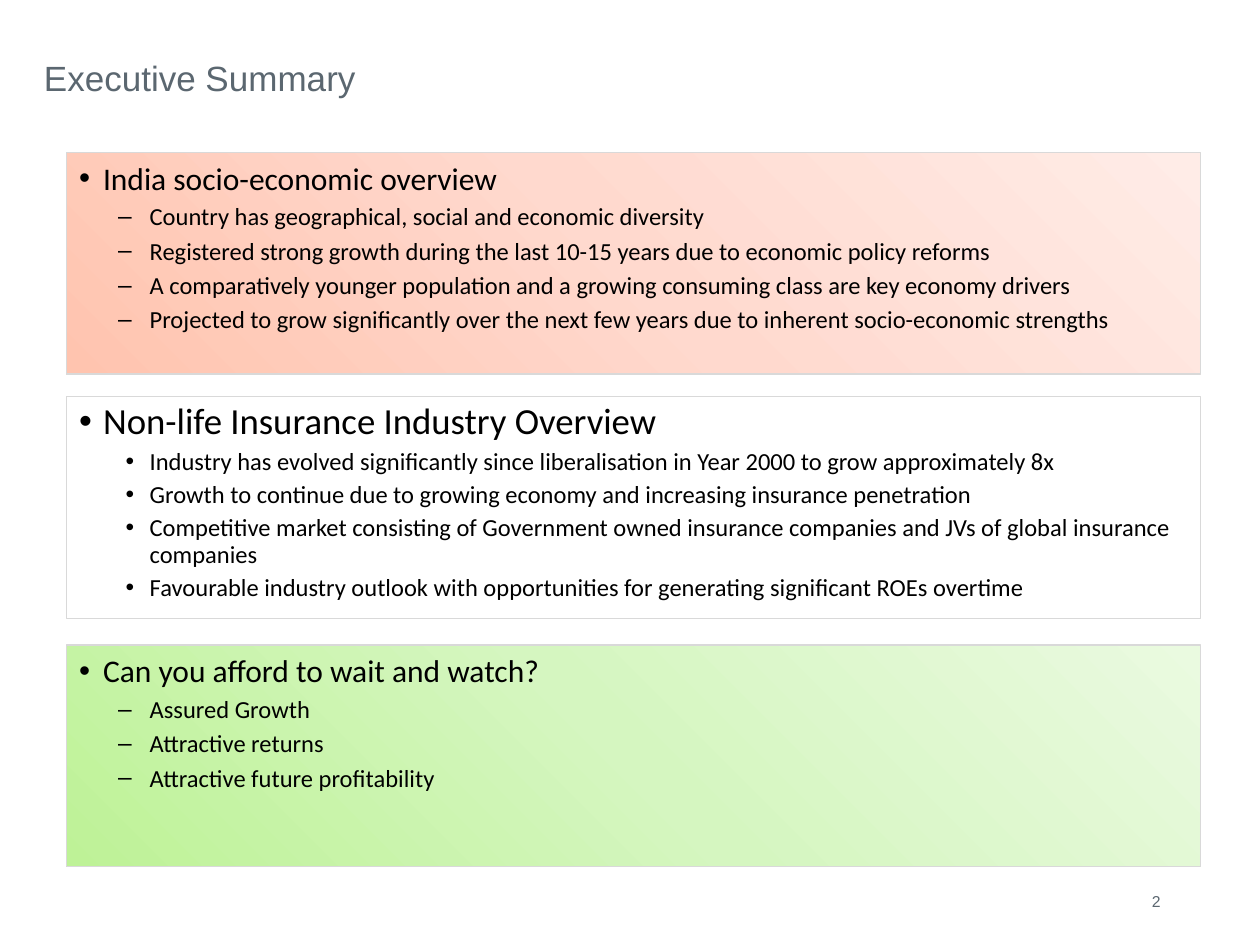
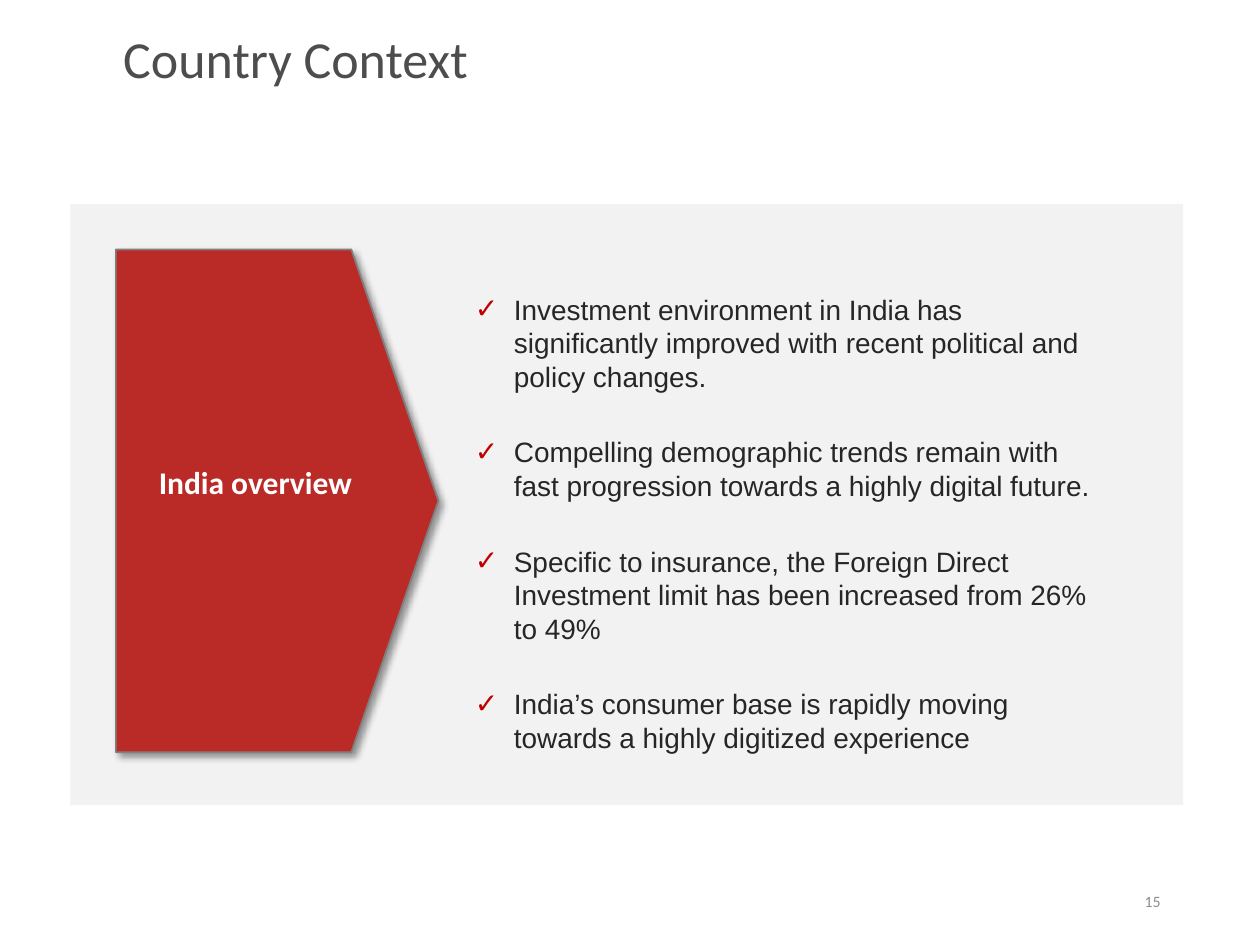
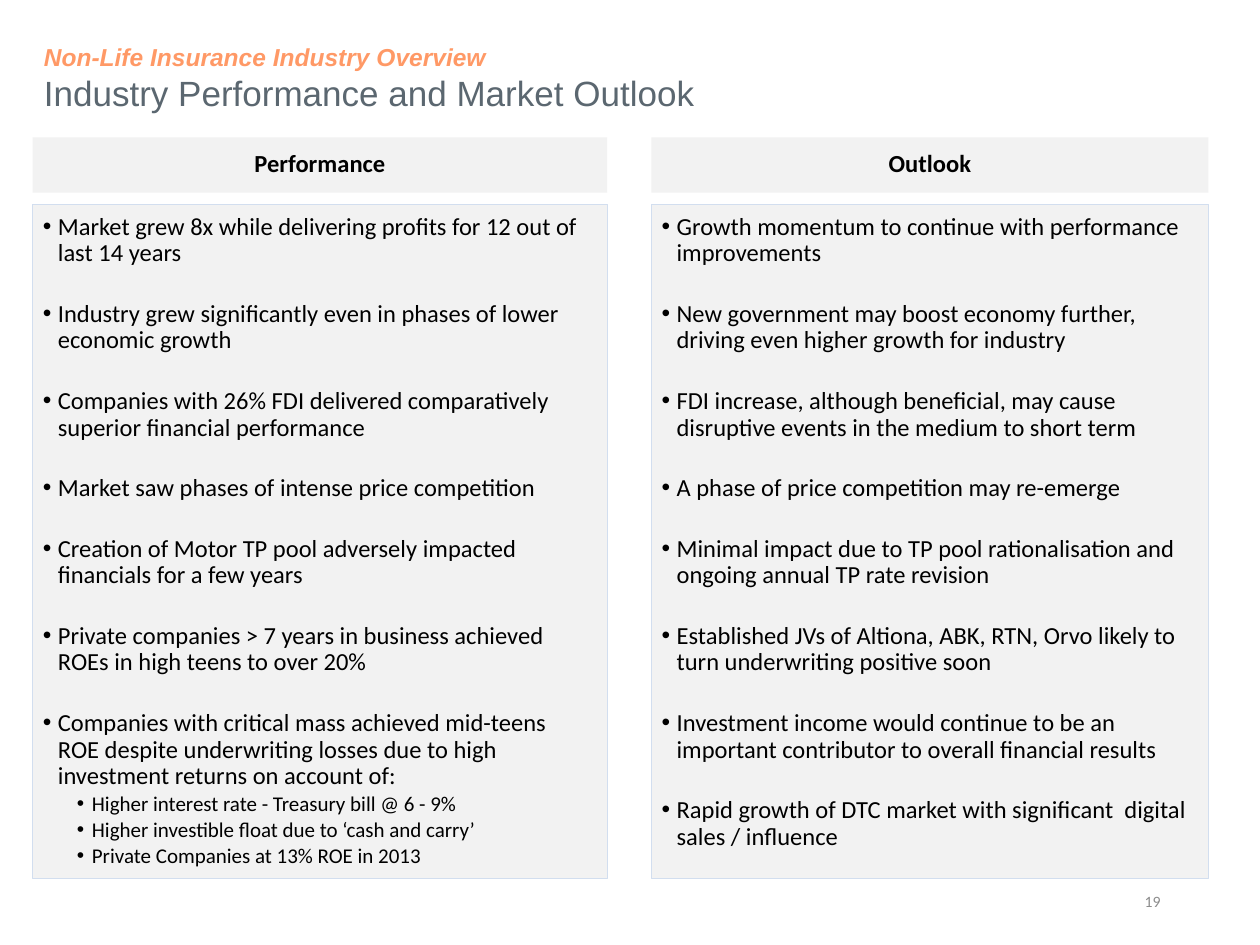
from dataclasses import dataclass, replace

from lxml import etree
from pptx import Presentation
from pptx.dml.color import RGBColor
from pptx.enum.shapes import MSO_SHAPE
from pptx.enum.text import MSO_ANCHOR, PP_ALIGN
from pptx.oxml import parse_xml
from pptx.oxml.ns import nsdecls, qn
from pptx.util import Inches, Pt

RECT = MSO_SHAPE.RECTANGLE
ARROW = MSO_SHAPE.PENTAGON
TOP, MIDDLE = MSO_ANCHOR.TOP, MSO_ANCHOR.MIDDLE
LEFT, CENTER, RIGHT = PP_ALIGN.LEFT, PP_ALIGN.CENTER, PP_ALIGN.RIGHT

COLORS = {
    "black": "000000",
    "white": "FFFFFF",
    "slate": "5B6770",
    "dark": "4D4D4D",
    "ink": "262626",
    "gray": "8C8C8C",
    "edge": "808080",
    "rule": "D9D9D9",
    "panel": "F2F2F2",
    "frame": "D2DEEF",
    "red": "BA2B28",
    "check": "C00000",
    "orange": "FF9966",
}
PEACH = ("FFC4AF", "FFD9CE", "FFECE7")
GREEN = ("BEF297", "D5F6C0", "EAFAE0")


@dataclass(frozen=True)
class Style:
    size: float
    font: str = "Calibri"
    color: str = "black"
    bold: bool = False
    italic: bool = False
    align: int = LEFT
    left: float = 0
    hang: float = 0
    line: float = 1
    before: float = 0
    after: float = 0
    mark: str = ""
    tint: str = ""


@dataclass(frozen=True)
class Box:
    x: float
    y: float
    w: float
    h: float
    fill: str = ""
    edge: str = ""
    weight: float = 0.75
    kind: int = RECT
    anchor: int = TOP
    pad: tuple = (0.1, 0.05, 0.1, 0.05)


@dataclass(frozen=True)
class Topic:
    y: float
    head: str
    points: tuple
    top: Style
    sub: Style
    shades: tuple = ()


Lines = list[tuple[str, Style]]

TITLE = Style(20, "Arial", "slate")
KICKER = Style(14, "Arial", "orange", bold=True, italic=True)
PAGE = Style(9, color="gray", align=RIGHT)
TITLE_BOX = Box(0.25, 0.08, 9.42, 1.07, anchor=MIDDLE)
PAGE_BOX = Box(7.06, 6.95, 2.25, 0.4, anchor=MIDDLE)

HEAD = Style(18, left=0.19, hang=0.19, before=3.6, mark="•")
DASH = Style(14, left=0.56, hang=0.25, before=2.8, mark="–")
LEAD = replace(HEAD, size=21, line=0.9, before=7.5)
DOT = replace(DASH, hang=0.19, line=0.9, before=3.8, mark="•")
CHECK = Style(16, "Arial", "ink", left=0.49, hang=0.31, before=12, after=12,
              mark="✓", tint="check")
LABEL = Style(18, color="white", bold=True, align=CENTER)
BANNER = Style(14, bold=True, align=CENTER, line=0.9)
ITEM = Style(14, left=0.12, hang=0.12, line=0.9, after=19.5, mark="•")
LAST = replace(ITEM, after=2.1)
DETAIL = replace(LAST, size=12, left=0.39, after=1.8)

TOPICS = (
    Topic(1.21, "India socio-economic overview", (
        "Country has geographical, social and economic diversity",
        "Registered strong growth during the last 10-15 years due to economic policy reforms",
        "A comparatively younger population and a growing consuming class are key economy drivers",
        "Projected to grow significantly over the next few years due to inherent socio-economic strengths",
    ), HEAD, DASH, PEACH),
    Topic(3.15, "Non-life Insurance Industry Overview", (
        "Industry has evolved significantly since liberalisation in Year 2000 to grow approximately 8x",
        "Growth to continue due to growing economy and increasing insurance penetration",
        "Competitive market consisting of Government owned insurance companies and JVs of global insurance companies",
        "Favourable industry outlook with opportunities for generating significant ROEs overtime",
    ), LEAD, DOT),
    Topic(5.12, "Can you afford to wait and watch?", (
        "Assured Growth",
        "Attractive returns",
        "Attractive future profitability",
    ), HEAD, DASH, GREEN),
)

CONTEXT = (
    "Investment environment in India has significantly improved with recent political and policy changes.",
    "Compelling demographic trends remain with fast progression towards a highly digital future.",
    "Specific to insurance, the Foreign Direct Investment limit has been increased from 26% to 49%",
    "India’s consumer base is rapidly moving towards a highly digitized experience",
)

PAST = (
    "Market grew 8x while delivering profits for 12 out of last 14 years",
    "Industry grew significantly even in phases of lower economic growth",
    "Companies with 26% FDI delivered comparatively superior financial performance",
    "Market saw phases of intense price competition",
    "Creation of Motor TP pool adversely impacted financials for a few years",
    "Private companies > 7 years in business achieved ROEs in high teens to over 20%",
    "Companies with critical mass achieved mid-teens ROE despite underwriting losses "
    "due to high investment returns on account of:",
)
CAUSES = (
    "Higher interest rate - Treasury bill @ 6 - 9%",
    "Higher investible float due to ‘cash and carry’",
    "Private Companies at 13% ROE in 2013",
)
FUTURE = (
    "Growth momentum to continue with performance improvements",
    "New government may boost economy further, driving even higher growth for industry",
    "FDI increase, although beneficial, may cause disruptive events in the medium to short term",
    "A phase of price competition may re-emerge",
    "Minimal impact due to TP pool rationalisation and ongoing annual TP rate revision",
    "Established JVs of Altiona, ABK, RTN, Orvo likely to turn underwriting positive soon",
    "Investment income would continue to be an important contributor to overall financial results",
    "Rapid growth of DTC market with significant  digital sales / influence",
)


def rgb(name: str) -> RGBColor:
    return RGBColor.from_string(COLORS[name])


def add_mark(para, style: Style) -> None:
    props = para._p.get_or_add_pPr()
    props.set("marL", str(Inches(style.left)))
    props.set("indent", str(-Inches(style.hang)))
    if style.tint:
        tint = etree.SubElement(props, qn("a:buClr"))
        etree.SubElement(tint, qn("a:srgbClr"), val=COLORS[style.tint])
    etree.SubElement(props, qn("a:buFont"), typeface="Arial")
    etree.SubElement(props, qn("a:buChar"), char=style.mark)


def write(shape, lines: Lines, box: Box) -> None:
    frame = shape.text_frame
    frame.word_wrap = True
    frame.vertical_anchor = box.anchor
    (frame.margin_left, frame.margin_top,
     frame.margin_right, frame.margin_bottom) = map(Inches, box.pad)
    for i, (text, style) in enumerate(lines):
        para = frame.paragraphs[0] if i == 0 else frame.add_paragraph()
        para.text = text
        para.alignment = style.align
        para.line_spacing = style.line
        para.space_before = Pt(style.before)
        para.space_after = Pt(style.after)
        if style.mark:
            add_mark(para, style)
        font = para.font
        font.name, font.size = style.font, Pt(style.size)
        font.bold, font.italic = style.bold, style.italic
        font.color.rgb = rgb(style.color)


def add_text(slide, box: Box, lines: Lines) -> None:
    area = map(Inches, (box.x, box.y, box.w, box.h))
    write(slide.shapes.add_textbox(*area), lines, box)


def add_box(slide, box: Box, lines: Lines):
    area = map(Inches, (box.x, box.y, box.w, box.h))
    shape = slide.shapes.add_shape(box.kind, *area)
    shape.shadow.inherit = False
    if box.fill:
        shape.fill.solid()
        shape.fill.fore_color.rgb = rgb(box.fill)
    else:
        shape.fill.background()
    if box.edge:
        shape.line.color.rgb = rgb(box.edge)
        shape.line.width = Pt(box.weight)
    else:
        shape.line.fill.background()
    write(shape, lines, box)
    return shape


def shade(shape, shades: tuple) -> None:
    stops = "".join(
        f'<a:gs pos="{i * 50000}"><a:srgbClr val="{tone}"/></a:gs>'
        for i, tone in enumerate(shades))
    grad = parse_xml(
        f'<a:gradFill {nsdecls("a")}><a:gsLst>{stops}</a:gsLst>'
        '<a:path path="circle"><a:fillToRect t="100000" r="100000"/></a:path>'
        '</a:gradFill>')
    props = shape._element.spPr
    props.replace(props.find(qn("a:noFill")), grad)


def cast(shape) -> None:
    effects = shape._element.spPr.find(qn("a:effectLst"))
    effects.append(parse_xml(
        f'<a:outerShdw {nsdecls("a")} blurRad="{Pt(4)}" dist="{Pt(3)}" '
        f'dir="{45 * 60000}" algn="tl" rotWithShape="0"><a:srgbClr val="{COLORS["black"]}">'
        '<a:alpha val="40000"/></a:srgbClr></a:outerShdw>'))


def add_page(slide, number: int, style: Style = PAGE) -> None:
    add_text(slide, PAGE_BOX, [(str(number), style)])


def summary(slide) -> None:
    add_text(slide, TITLE_BOX, [("Executive Summary", TITLE)])
    for topic in TOPICS:
        lines = [(topic.head, topic.top)]
        lines += [(point, topic.sub) for point in topic.points]
        shape = add_box(slide, Box(0.53, topic.y, 9, 1.76, edge="rule"), lines)
        if topic.shades:
            shade(shape, topic.shades)
    add_page(slide, 2, replace(PAGE, font="Arial", color="slate"))


def context(slide) -> None:
    add_text(slide, Box(0.88, 0.22, 9, 0.81),
             [("Country Context", Style(29.7, color="dark", line=0.9))])
    add_box(slide, Box(0.56, 1.62, 8.83, 4.77, "panel"), [])
    add_text(slide, Box(3.49, 2.27, 5.29, 3.8), [(point, CHECK) for point in CONTEXT])
    arrow = add_box(slide, Box(0.92, 1.98, 2.56, 3.99, "red", "edge", 1, ARROW, MIDDLE,
                               (0.1, 0.05, 0.1, 0.35)), [("India overview", LABEL)])
    arrow.adjustments[0] = 0.27
    cast(arrow)
    add_page(slide, 15)


def outlook(slide) -> None:
    past = [(text, ITEM) for text in PAST[:-1]] + [(PAST[-1], LAST)]
    past += [(text, DETAIL) for text in CAUSES]
    future = [(text, ITEM) for text in FUTURE[:-1]] + [(FUTURE[-1], LAST)]
    for x, w, head, lines in ((0.26, 4.56, "Performance", past),
                              (5.17, 4.42, "Outlook", future)):
        add_box(slide, Box(x, 1.09, w, 0.44, "panel", anchor=MIDDLE,
                           pad=(0.11, 0.06, 0.11, 0.06)), [(head, BANNER)])
        add_box(slide, Box(x, 1.62, w, 5.35, "panel", "frame", 0.5,
                           pad=(0.08, 0.08, 0.11, 0.12)), lines)
    add_text(slide, TITLE_BOX, [("Non-Life Insurance Industry Overview", KICKER),
                                ("Industry Performance and Market Outlook", TITLE)])
    add_page(slide, 19)


def main() -> None:
    deck = Presentation()
    deck.slide_width, deck.slide_height = Inches(10), Inches(7.5)
    for draw in (summary, context, outlook):
        draw(deck.slides.add_slide(deck.slide_layouts[6]))
    deck.save("out.pptx")


if __name__ == "__main__":
    main()
